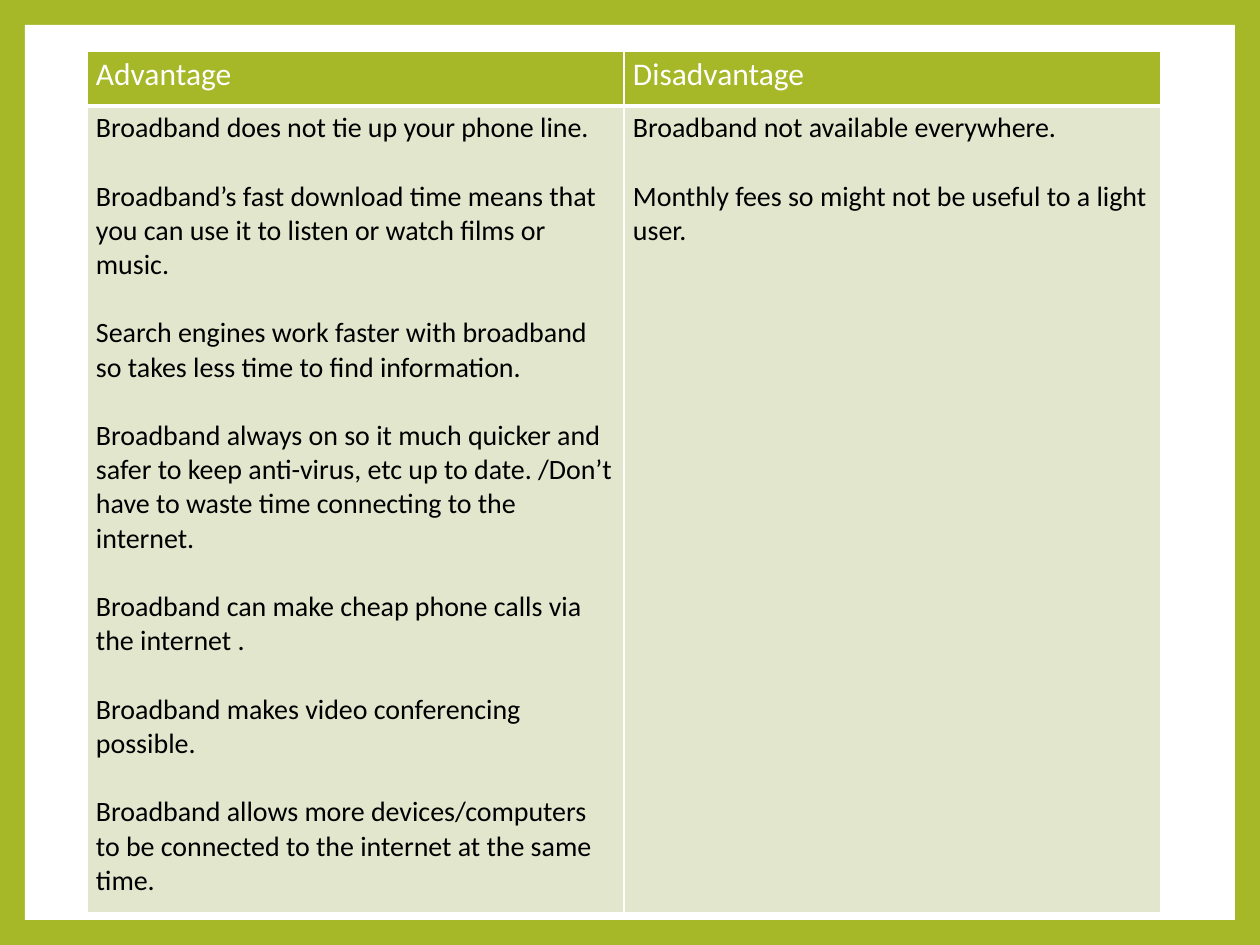
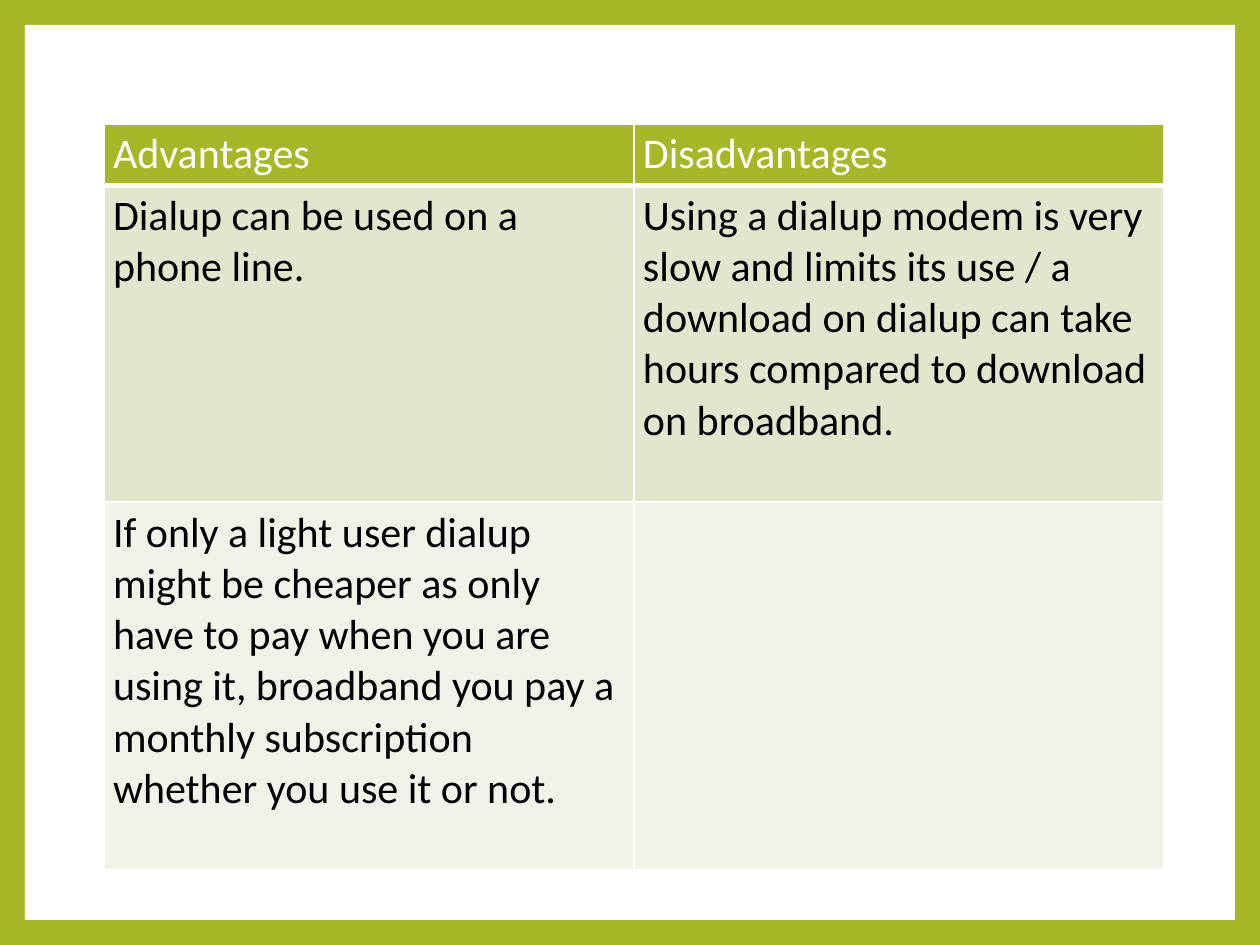
from lxml import etree
from pptx import Presentation
from pptx.dml.color import RGBColor
from pptx.enum.shapes import MSO_SHAPE
from pptx.oxml.ns import qn
from pptx.util import Emu, Pt

RECTANGLE = MSO_SHAPE.RECTANGLE
PX = 914400 / 126
SLIDE_SIZE = (1260, 945)
FRAME = 25
BLANK_LAYOUT = 6

GREEN = RGBColor(0xA6, 0xB7, 0x27)
PALE_GREEN = RGBColor(0xE1, 0xE6, 0xCD)
PALEST_GREEN = RGBColor(0xF1, 0xF3, 0xE8)
WHITE = RGBColor(0xFF, 0xFF, 0xFF)
BLACK = RGBColor(0x00, 0x00, 0x00)

FONT = "Calibri"
LINE_HEIGHT = 1.22
ROW_FILLS = (GREEN, PALE_GREEN, PALEST_GREEN)
BORDER_WIDTHS = {"a:lnL": 1, "a:lnR": 1, "a:lnT": 1, "a:lnB": 1}
HEADER_BORDER_WIDTHS = {**BORDER_WIDTHS, "a:lnB": 3}

BROADBAND = {
    "box": (87, 51, 1074),
    "row_heights": (55, 807),
    "sizes": (18, 16),
    "rows": [
        (["Advantage"], ["Disadvantage"]),
        (
            [
                "Broadband does not tie up your phone line.",
                "Broadband’s fast download time means that you can use it to listen "
                "or watch films or music.",
                "Search engines work faster with broadband so takes less time to "
                "find information.",
                "Broadband always on so it much quicker and safer to keep anti-virus, "
                "etc up to date. /Don’t have to waste time connecting to the internet.",
                "Broadband can make cheap phone calls via the internet .",
                "Broadband makes video conferencing possible.",
                "Broadband allows more devices/computers to be connected to the "
                "internet at the same time.",
            ],
            [
                "Broadband not available everywhere.",
                "Monthly fees so might not be useful to a light user.",
            ],
        ),
    ],
}

DIALUP = {
    "box": (104, 124, 1060),
    "row_heights": (60, 317, 368),
    "sizes": (24, 24),
    "rows": [
        (["Advantages"], ["Disadvantages"]),
        (
            ["Dialup can be used on a phone line."],
            [
                "Using a dialup modem is very slow and limits its use / a download "
                "on dialup can take hours compared to download on broadband."
            ],
        ),
        (
            [
                "If only a light user dialup might be cheaper as only have to pay when "
                "you are using it, broadband you pay a monthly subscription whether "
                "you use it or not."
            ],
            [],
        ),
    ],
}


def px(length):
    return Emu(round(length * PX))


def add_framed_slide(prs):
    """Add a slide with a green frame around a white panel."""
    slide = prs.slides.add_slide(prs.slide_layouts[BLANK_LAYOUT])
    width, height = SLIDE_SIZE
    panel = slide.shapes.add_shape(
        RECTANGLE, px(FRAME), px(FRAME), px(width - 2 * FRAME), px(height - 2 * FRAME)
    )
    panel.shadow.inherit = False
    panel.fill.solid()
    panel.fill.fore_color.rgb = WHITE
    panel.line.fill.background()
    return slide


def set_borders(cell, widths):
    properties = cell._tc.get_or_add_tcPr()
    for position, (side, width) in enumerate(widths.items()):
        border = etree.Element(qn(side), w=str(Pt(width)))
        fill = etree.SubElement(border, qn("a:solidFill"))
        etree.SubElement(fill, qn("a:srgbClr"), val=str(WHITE))
        properties.insert(position, border)


def write_paragraphs(text_frame, texts, font_format, gap):
    for index, text in enumerate(texts):
        if index:
            paragraph = text_frame.add_paragraph()
            paragraph.space_before = gap
        else:
            paragraph = text_frame.paragraphs[0]
        run = paragraph.add_run()
        run.text = text
        for name, value in font_format.items():
            setattr(run.font, name, value)


def format_cell(cell, texts, row, size):
    margins = {"margin_left": 9, "margin_right": 9, "margin_top": 5, "margin_bottom": 5}
    for name, value in margins.items():
        setattr(cell, name, px(value))
    cell.fill.solid()
    cell.fill.fore_color.rgb = ROW_FILLS[row]
    set_borders(cell, BORDER_WIDTHS if row else HEADER_BORDER_WIDTHS)
    font_format = {"name": FONT, "size": Pt(size), "bold": False}
    first_paragraph = cell.text_frame.paragraphs[0]
    first_paragraph.font.size = Pt(size)
    write_paragraphs(cell.text_frame, texts, font_format, Pt(size * LINE_HEIGHT))
    for paragraph in cell.text_frame.paragraphs:
        for run in paragraph.runs:
            run.font.color.rgb = BLACK if row else WHITE


def add_comparison(slide, box, row_heights, sizes, rows):
    left, top, width = box
    columns = len(rows[0])
    table = slide.shapes.add_table(
        len(rows), columns, px(left), px(top), px(width), px(sum(row_heights))
    ).table
    for column in table.columns:
        column.width = px(width / columns)
    header_size, body_size = sizes
    for row, (height, cells) in enumerate(zip(row_heights, rows)):
        table.rows[row].height = px(height)
        for column, texts in enumerate(cells):
            size = body_size if row else header_size
            format_cell(table.cell(row, column), texts, row, size)


def main():
    prs = Presentation()
    prs.slide_width, prs.slide_height = map(px, SLIDE_SIZE)
    background = prs.slide_master.background.fill
    background.solid()
    background.fore_color.rgb = GREEN
    for comparison in (BROADBAND, DIALUP):
        add_comparison(add_framed_slide(prs), **comparison)
    prs.save("out.pptx")


if __name__ == "__main__":
    main()
